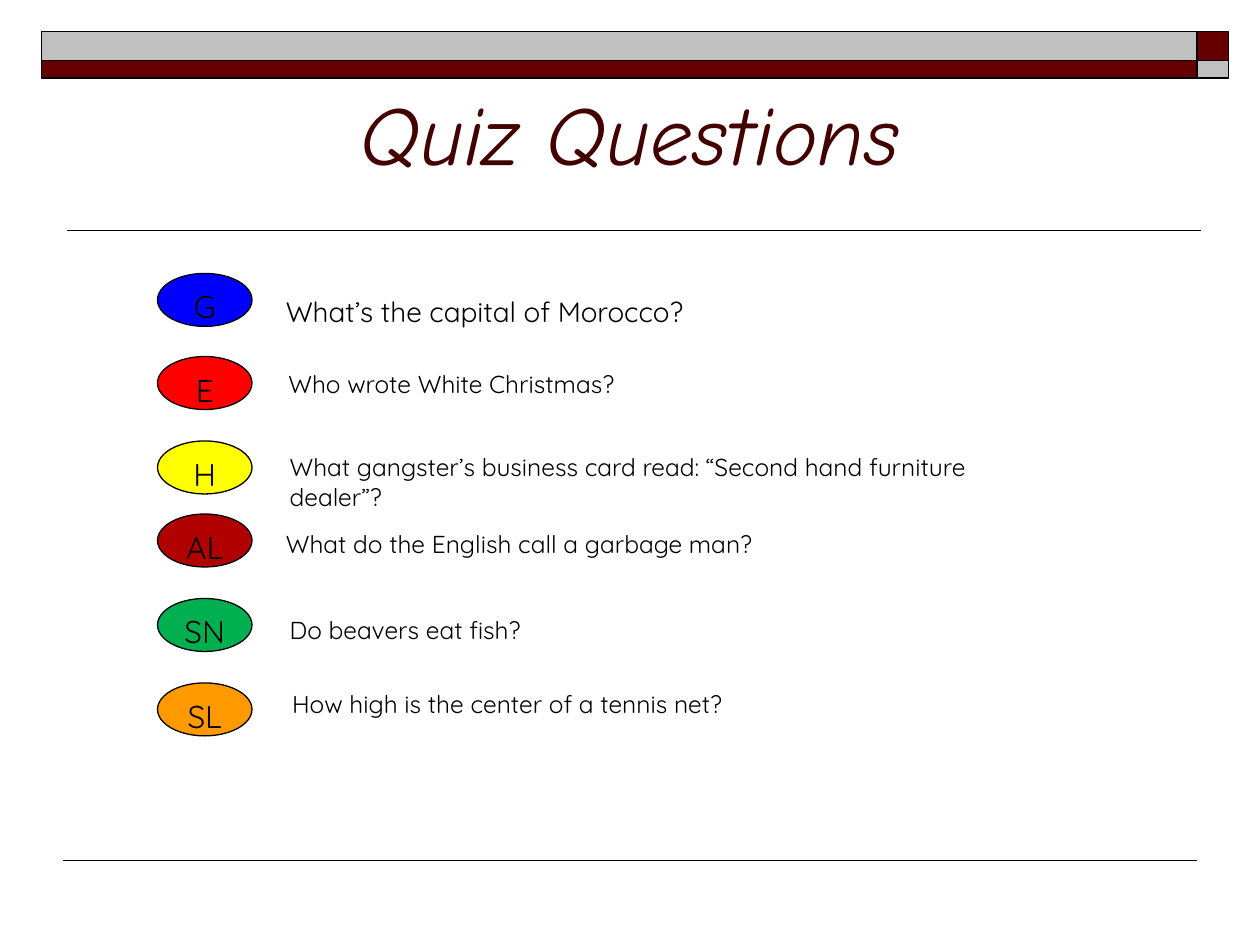
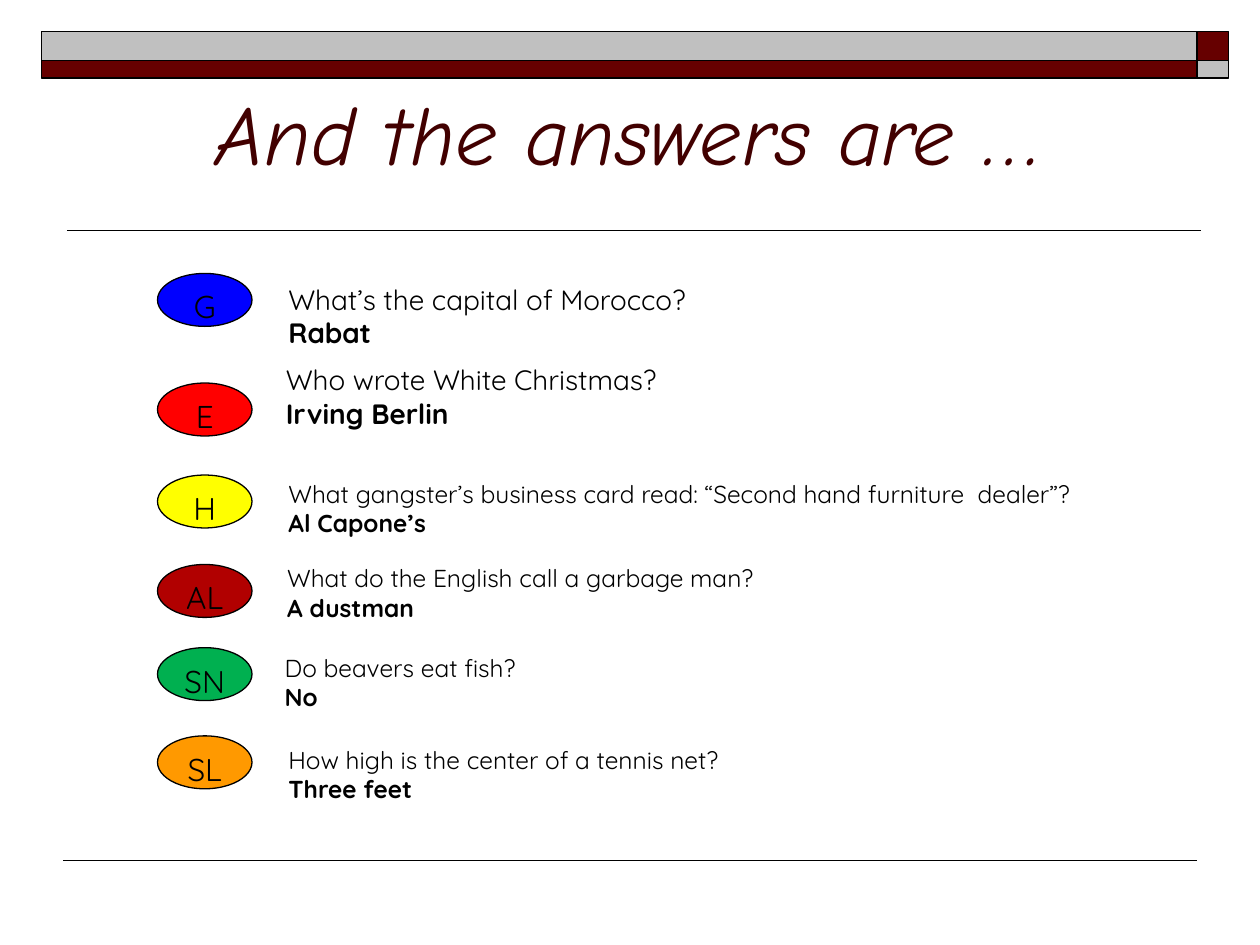
import pptx
import pptx.dml.color
import pptx.enum.shapes
import pptx.enum.text
import pptx.oxml.ns
import pptx.util
from lxml import etree

Inches = pptx.util.Inches
Pt = pptx.util.Pt
RGBColor = pptx.dml.color.RGBColor
PP_ALIGN = pptx.enum.text.PP_ALIGN
MSO_ANCHOR = pptx.enum.text.MSO_ANCHOR
MSO_AUTO_SIZE = pptx.enum.text.MSO_AUTO_SIZE
MSO_SHAPE = pptx.enum.shapes.MSO_SHAPE

BLACK = RGBColor(0x00, 0x00, 0x00)
MAROON = RGBColor(0x66, 0x00, 0x00)
SILVER = RGBColor(0xC0, 0xC0, 0xC0)
TITLE_COLOR = RGBColor(0x42, 0x00, 0x00)
TITLE_FONT = "Comic Neue"
BODY_FONT = "Quicksand"

BADGE_LEFT, BADGE_WIDTH, BADGE_HEIGHT = 1.25, 0.75, 0.42

# Badge letters, badge colour, question, answer
TRIVIA = [
    ("G", RGBColor(0x00, 0x00, 0xFF), "What’s the capital of Morocco?", "Rabat"),
    ("E", RGBColor(0xFF, 0x00, 0x00), "Who wrote White Christmas?", "Irving Berlin"),
    ("H", RGBColor(0xFF, 0xFF, 0x00),
     "What gangster’s business card read: “Second hand furniture  dealer”?",
     "Al Capone’s"),
    ("AL", RGBColor(0xB1, 0x00, 0x00),
     "What do the English call a garbage man?", "A dustman"),
    ("SN", RGBColor(0x00, 0xB0, 0x50), "Do beavers eat fish?", "No"),
    ("SL", RGBColor(0xFF, 0x99, 0x00),
     "How high is the center of a tennis net?", "Three feet"),
]

# Badge top, then left, top, width and size of the text beside it
QUESTION_ROWS = [
    (2.17, 2.17, 2.29, 6.17, 16),
    (2.83, 2.19, 2.88, 7.22, 14),
    (3.5, 2.2, 3.54, 6.05, 14),
    (4.08, 2.17, 4.15, 7.08, 14),
    (4.75, 2.2, 4.83, 6.5, 14),
    (5.42, 2.22, 5.42, 7.17, 14),
]
ANSWER_ROWS = [
    (2.17, 2.19, 2.19, 6.17, 16),
    (3.04, 2.17, 2.83, 6.83, 16),
    (3.77, 2.19, 3.75, 7.41, 14),
    (4.48, 2.18, 4.42, 7.08, 14),
    (5.14, 2.16, 5.13, 6.75, 14),
    (5.84, 2.19, 5.86, 7.17, 14),
]


def add_run(paragraph, text, font, size, color, bold=False, italic=False):
    run = paragraph.add_run()
    run.text = text
    run.font.name = font
    run.font.size = Pt(size)
    run.font.color.rgb = color
    run.font.bold = bold
    run.font.italic = italic


def add_filled(slide, preset, left, top, width, height, fill, line_width):
    shape = slide.shapes.add_shape(
        preset, Inches(left), Inches(top), Inches(width), Inches(height))
    shape.shadow.inherit = False
    shape.fill.solid()
    shape.fill.fore_color.rgb = fill
    shape.line.color.rgb = BLACK
    shape.line.width = Pt(line_width)
    return shape


def add_rule(slide, left, right, y, line_width):
    rule = slide.shapes.add_connector(
        pptx.enum.shapes.MSO_CONNECTOR.STRAIGHT,
        Inches(left), Inches(y), Inches(right), Inches(y))
    rule.line.color.rgb = BLACK
    rule.line.width = Pt(line_width)
    etree.SubElement(rule._element.spPr, pptx.oxml.ns.qn("a:effectLst"))
    return rule


def decorate_layout(layout, slide):
    """Draw the bands and rules on the slide, then move them to its layout."""
    decorations = [add_rule(slide, 0.53, 9.53, 1.83, 1)]
    for top, height, band_color, corner_color in (
            (0.25, 0.23, SILVER, MAROON), (0.48, 0.14, MAROON, SILVER)):
        for left, width, color in (
                (0.33, 9.17, band_color), (9.5, 0.25, corner_color)):
            decorations.append(add_filled(
                slide, MSO_SHAPE.RECTANGLE, left, top, width, height, color, 1))
    decorations.append(add_rule(slide, 0.5, 9.5, 6.83, 0.75))
    for number, decoration in enumerate(decorations):
        element = decoration._element
        element.xpath(".//p:cNvPr")[0].set("id", str(100 + number))
        layout.shapes._spTree.insert(2 + number, element)


def set_title(slide, text):
    title = slide.shapes.title
    title.left, title.top = Inches(0.5), Inches(0.25)
    title.width, title.height = Inches(9), Inches(1.25)
    frame = title.text_frame
    frame.auto_size = MSO_AUTO_SIZE.NONE
    frame.vertical_anchor = MSO_ANCHOR.BOTTOM
    paragraph = frame.paragraphs[0]
    paragraph.alignment = PP_ALIGN.CENTER
    add_run(paragraph, text, TITLE_FONT, 48, TITLE_COLOR, italic=True)


def add_badge(slide, top, letters, color):
    badge = add_filled(slide, MSO_SHAPE.OVAL, BADGE_LEFT, top,
                       BADGE_WIDTH, BADGE_HEIGHT, color, 0.75)
    frame = badge.text_frame
    frame.vertical_anchor = MSO_ANCHOR.TOP
    paragraph = frame.paragraphs[0]
    paragraph.alignment = PP_ALIGN.CENTER
    add_run(paragraph, letters, BODY_FONT, 18, BLACK)


def add_trivia_text(slide, left, top, width, size, question, answer=None):
    height = 0.1 + size * 1.25 / 72 * (2 if answer else 1)
    box = slide.shapes.add_textbox(
        Inches(left), Inches(top), Inches(width), Inches(height))
    frame = box.text_frame
    frame.word_wrap = True
    frame.auto_size = MSO_AUTO_SIZE.SHAPE_TO_FIT_TEXT
    add_run(frame.paragraphs[0], question, BODY_FONT, size, BLACK)
    if answer:
        add_run(frame.add_paragraph(), answer, BODY_FONT, size, BLACK, bold=True)


def fill_trivia_slide(slide, title, rows, show_answers):
    set_title(slide, title)
    for (letters, color, question, answer), row in zip(TRIVIA, rows):
        badge_top, left, top, width, size = row
        add_badge(slide, badge_top, letters, color)
        add_trivia_text(slide, left, top, width, size, question,
                        answer if show_answers else None)


def main():
    deck = pptx.Presentation()
    deck.slide_width, deck.slide_height = Inches(10), Inches(7.5)
    title_only = deck.slide_layouts[5]
    questions = deck.slides.add_slide(title_only)
    answers = deck.slides.add_slide(title_only)
    decorate_layout(title_only, questions)
    fill_trivia_slide(questions, "Quiz Questions", QUESTION_ROWS, False)
    fill_trivia_slide(answers, "And the answers are …", ANSWER_ROWS, True)
    deck.save("out.pptx")


if __name__ == "__main__":
    main()
